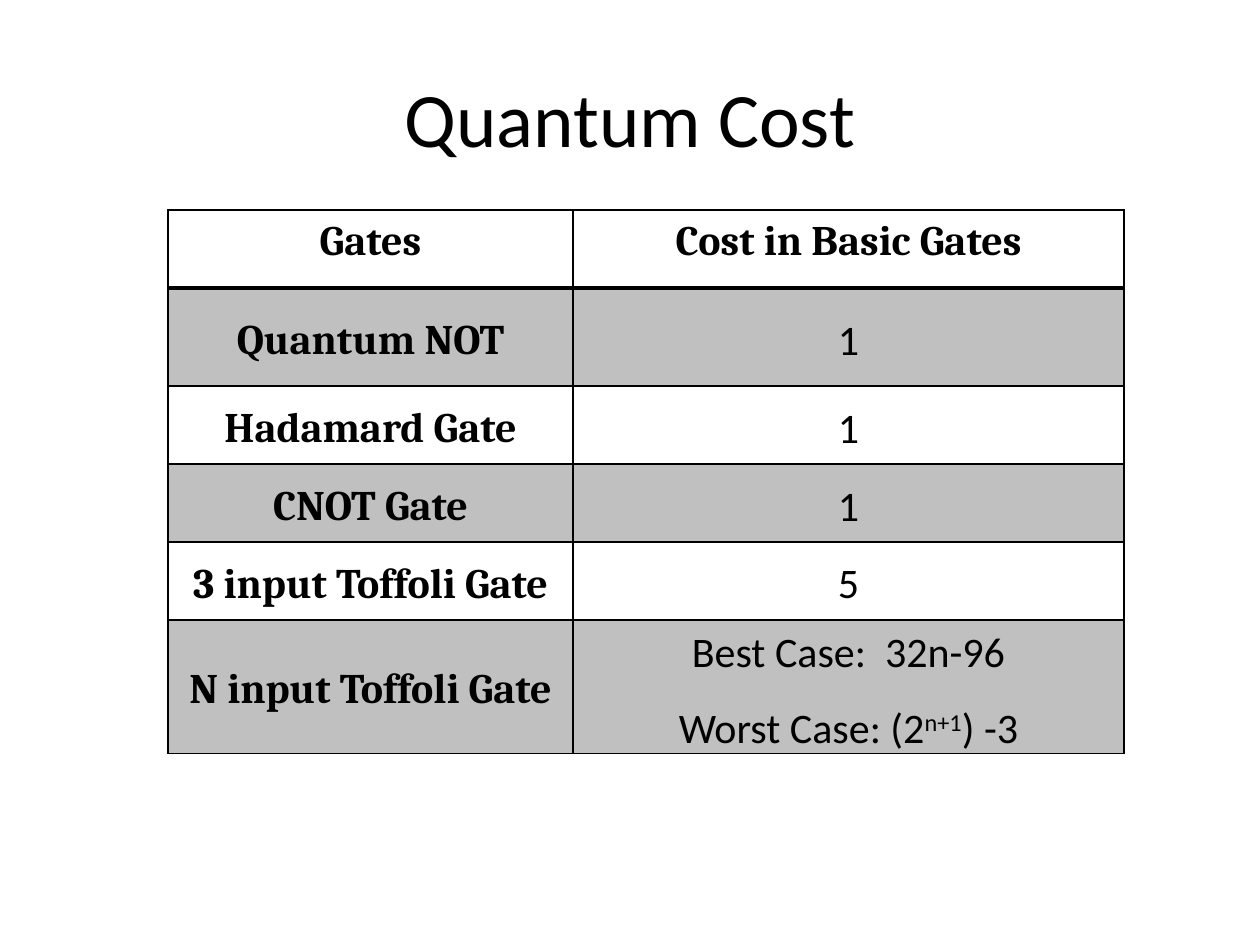
from lxml.etree import SubElement
from pptx import Presentation
from pptx.dml.color import RGBColor
from pptx.enum.text import MSO_ANCHOR, PP_ALIGN
from pptx.oxml.ns import qn
from pptx.util import Emu, Pt

EMU_PER_PX = 914400 / 126
BLACK = RGBColor(0x00, 0x00, 0x00)
GREY = RGBColor(0xC0, 0xC0, 0xC0)

COLUMN_WIDTHS = [405, 551]
ROW_HEIGHTS = [78, 98, 78, 78, 78, 92]
# Each cell is a list of paragraphs, each paragraph a list of runs;
# every second run is superscript.
ROWS = [
    ([["Gates"]], [["Cost in Basic Gates"]]),
    ([["Quantum NOT"]], [["1"]]),
    ([["Hadamard Gate"]], [["1"]]),
    ([["CNOT Gate"]], [["1"]]),
    ([["3 input Toffoli Gate"]], [["5"]]),
    ([["N input Toffoli Gate"]],
     [["Best Case:  32n-96"], ["Worst Case: (2", "n+1", ") -3"]]),
]


def px(length):
    return Emu(round(length * EMU_PER_PX))


def set_font(paragraph, name, size, bold=False):
    font = paragraph.font
    font.name, font.size, font.bold = name, Pt(size), bold
    font.color.rgb = BLACK


def add_title(slide, text):
    shape = slide.shapes.add_textbox(px(63), px(38), px(1134), px(158))
    frame = shape.text_frame
    frame.word_wrap = True
    frame.vertical_anchor = MSO_ANCHOR.MIDDLE
    paragraph = frame.paragraphs[0]
    paragraph.text = text
    paragraph.alignment = PP_ALIGN.CENTER
    set_font(paragraph, "Calibri", 44)


def set_borders(cell, widths):
    properties = cell._tc.get_or_add_tcPr()
    for side, width in widths.items():
        line = SubElement(properties, qn(f"a:ln{side}"), w=str(Pt(width)))
        fill = SubElement(line, qn("a:solidFill"))
        SubElement(fill, qn("a:srgbClr"), val=str(BLACK))


def fill_cell(cell, paragraphs, font_name, bold):
    cell.margin_left = cell.margin_right = px(9)
    cell.margin_top = cell.margin_bottom = 0
    frame = cell.text_frame
    for index, texts in enumerate(paragraphs):
        paragraph = frame.add_paragraph() if index else frame.paragraphs[0]
        paragraph.alignment = PP_ALIGN.CENTER
        paragraph.line_spacing = 1.15
        paragraph.space_after = Pt(10)
        set_font(paragraph, font_name, 24, bold)
        for position, text in enumerate(texts):
            run = paragraph.add_run()
            run.text = text
            # Superscript
            if position % 2:
                run.font._element.set("baseline", "30000")


def add_cost_table(slide):
    table = slide.shapes.add_table(
        len(ROWS), len(COLUMN_WIDTHS), px(168), px(210),
        px(sum(COLUMN_WIDTHS)), px(sum(ROW_HEIGHTS))).table
    table.first_row = table.horz_banding = False
    for column, width in zip(table.columns, COLUMN_WIDTHS):
        column.width = px(width)
    for row, height in zip(table.rows, ROW_HEIGHTS):
        row.height = px(height)

    for row_index, row in enumerate(ROWS):
        is_header = row_index == 0
        for column_index, paragraphs in enumerate(row):
            cell = table.cell(row_index, column_index)
            is_label = is_header or column_index == 0
            fill_cell(cell, paragraphs,
                      "Cambria" if is_label else "Calibri", is_label)
            cell.vertical_anchor = (
                MSO_ANCHOR.TOP if is_header else MSO_ANCHOR.MIDDLE)
            # A heavier rule separates the header from the body
            set_borders(cell, {"L": 1, "R": 1,
                               "T": 2.25 if row_index == 1 else 1,
                               "B": 2.25 if is_header else 1})
            # Alternate rows are shaded
            if row_index % 2:
                cell.fill.solid()
                cell.fill.fore_color.rgb = GREY
            else:
                cell.fill.background()


def main():
    presentation = Presentation()
    presentation.slide_width = px(1260)
    presentation.slide_height = px(945)
    slide = presentation.slides.add_slide(presentation.slide_layouts[6])
    add_title(slide, "Quantum Cost")
    add_cost_table(slide)
    presentation.save("out.pptx")


if __name__ == "__main__":
    main()
